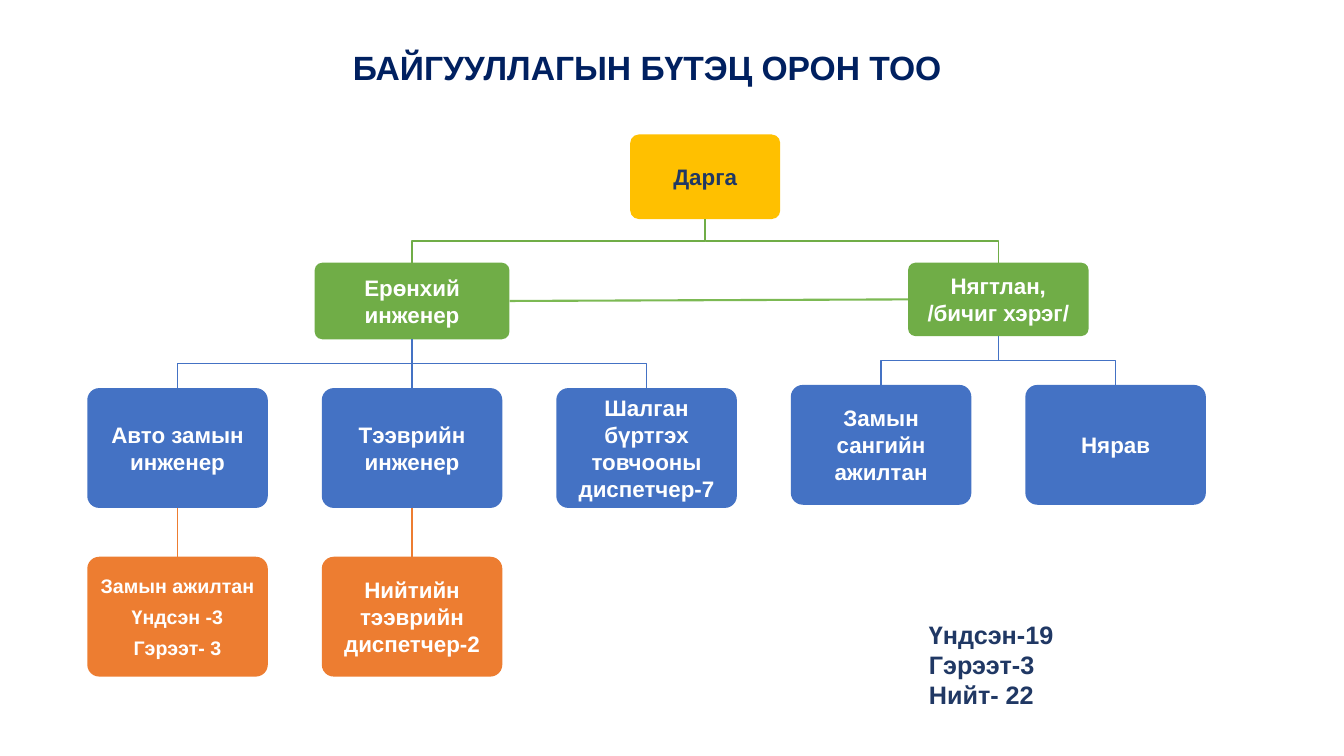
from dataclasses import dataclass

from lxml import etree
from pptx import Presentation
from pptx.dml.color import RGBColor
from pptx.enum.shapes import MSO_CONNECTOR, MSO_SHAPE
from pptx.enum.text import MSO_ANCHOR, PP_ALIGN
from pptx.oxml.ns import qn
from pptx.util import Cm, Pt

STRAIGHT = MSO_CONNECTOR.STRAIGHT
ROUNDED = MSO_SHAPE.ROUNDED_RECTANGLE
MIDDLE = MSO_ANCHOR.MIDDLE
CENTER, LEFT = PP_ALIGN.CENTER, PP_ALIGN.LEFT
TOP_SIDE, LEFT_SIDE, BOTTOM_SIDE, RIGHT_SIDE = range(4)

FONT = "Arial"
NAVY, DARK_BLUE, WHITE = "002060", "203864", "FFFFFF"
LEVEL_FILLS = ["FFC000", "70AD47", "4472C4", "ED7D31"]
LEVEL_GAPS = [1.1, 1.23, 1.23]
COLUMN_STEP = 5.91


@dataclass
class Post:
    lines: list
    width: float = 4.55
    height: float = 3.02
    staff: tuple = ()
    size: float = 16


ROAD_WORKERS = Post(["Замын ажилтан", "Үндсэн -3", "Гэрээт- 3"], size=14)
TRANSIT_DISPATCHER = Post(["Нийтийн тээврийн диспетчер-2"])
ENGINEER = Post(["Ерөнхий инженер"], 4.91, 1.93, (
    Post(["Авто замын инженер"], staff=(ROAD_WORKERS,)),
    Post(["Тээврийн инженер"], staff=(TRANSIT_DISPATCHER,)),
    Post(["Шалган бүртгэх товчооны диспетчер-7"]),
))
ACCOUNTANT = Post(["Нягтлан, /бичиг хэрэг/"], 4.55, 1.85, (
    Post(["Замын сангийн ажилтан"]),
    Post(["Нярав"]),
))
DIRECTOR = Post(["Дарга"], 3.78, 2.13, (ENGINEER, ACCOUNTANT))
TOTALS = ["Үндсэн-19", "Гэрээт-3", "Нийт- 22"]


def color(hex_code):
    return RGBColor.from_string(hex_code)


def write(frame, lines, size, ink, align, gap=0):
    frame.word_wrap = True
    for index, line in enumerate(lines):
        paragraph = frame.add_paragraph() if index else frame.paragraphs[0]
        paragraph.alignment = align
        paragraph.space_before = Pt(gap if index else 0)
        run = paragraph.add_run()
        run.text = line
        run.font.name = FONT
        run.font.size = Pt(size)
        run.font.bold = True
        run.font.color.rgb = color(ink)


def style_line(outline, ink, weight):
    outline.color.rgb = color(ink)
    outline.width = Pt(weight)


def link(slide, start, start_side, end, end_side, ink, weight):
    tie = slide.shapes.add_connector(STRAIGHT, 0, 0, 0, 0)
    tie.begin_connect(start, start_side)
    tie.end_connect(end, end_side)
    style_line(tie.line, ink, weight)
    etree.SubElement(tie._element.spPr, qn("a:effectLst"))


def bend(slide, start_x, start_y, end_x, end_y, ink):
    middle_y = (start_y + end_y) / 2
    builder = slide.shapes.build_freeform(Cm(start_x), Cm(start_y))
    builder.add_line_segments(
        [(Cm(start_x), Cm(middle_y)), (Cm(end_x), Cm(middle_y)), (Cm(end_x), Cm(end_y))],
        close=False,
    )
    branch = builder.convert_to_shape()
    branch.fill.background()
    branch.shadow.inherit = False
    style_line(branch.line, ink, 1)


def post_box(slide, post, center, top, level):
    card = slide.shapes.add_shape(
        ROUNDED, Cm(center - post.width / 2), Cm(top), Cm(post.width), Cm(post.height))
    card.adjustments[0] = 0.1
    card.shadow.inherit = False
    card.fill.solid()
    card.fill.fore_color.rgb = color(LEVEL_FILLS[level])
    card.line.fill.background()
    frame = card.text_frame
    frame.vertical_anchor = MIDDLE
    frame.margin_left = frame.margin_right = Cm(0.23)
    frame.margin_top = frame.margin_bottom = Cm(0.1)
    write(frame, post.lines, post.size, WHITE if level else DARK_BLUE, CENTER, 5.5)
    return card


def column_count(post):
    return sum(map(column_count, post.staff)) or 1


def org_branch(slide, post, left, top, level=0):
    bottom = top + post.height
    members = []
    member_left = left
    for member in post.staff:
        members.append(
            org_branch(slide, member, member_left, bottom + LEVEL_GAPS[level], level + 1))
        member_left += column_count(member) * COLUMN_STEP
    if members:
        center = (members[0][1] + members[-1][1]) / 2
    else:
        center = left + COLUMN_STEP / 2
    card = post_box(slide, post, center, top, level)
    for member_card, member_center in members:
        ink = LEVEL_FILLS[level + 1]
        if abs(member_center - center) < 0.01:
            link(slide, card, BOTTOM_SIDE, member_card, TOP_SIDE, ink, 1)
        else:
            bend(slide, center, bottom, member_center, bottom + LEVEL_GAPS[level], ink)
    if post is DIRECTOR:
        engineer, accountant = (member_card for member_card, _ in members)
        link(slide, engineer, RIGHT_SIDE, accountant, LEFT_SIDE, "7CB953", 1.5)
    return card, center


def heading(slide, left, top, width, height):
    title = slide.shapes.title
    title.left, title.top, title.width, title.height = map(Cm, (left, top, width, height))
    title.text_frame.vertical_anchor = MIDDLE
    write(title.text_frame, ["БАЙГУУЛЛАГЫН БҮТЭЦ ОРОН ТОО"], 24, NAVY, CENTER)


def totals(slide, left, top, width, height):
    summary = slide.shapes.add_textbox(*map(Cm, (left, top, width, height)))
    write(summary.text_frame, TOTALS, 18, DARK_BLUE, LEFT)


def main():
    deck = Presentation()
    deck.slide_width, deck.slide_height = Cm(33.87), Cm(19.05)
    slide = deck.slides.add_slide(deck.slide_layouts[5])
    heading(slide, 5.56, 1.05, 21.5, 1.27)
    org_branch(slide, DIRECTOR, 1.52, 3.39)
    totals(slide, 23.16, 15.47, 7.77, 2.57)
    deck.save("out.pptx")


if __name__ == "__main__":
    main()
